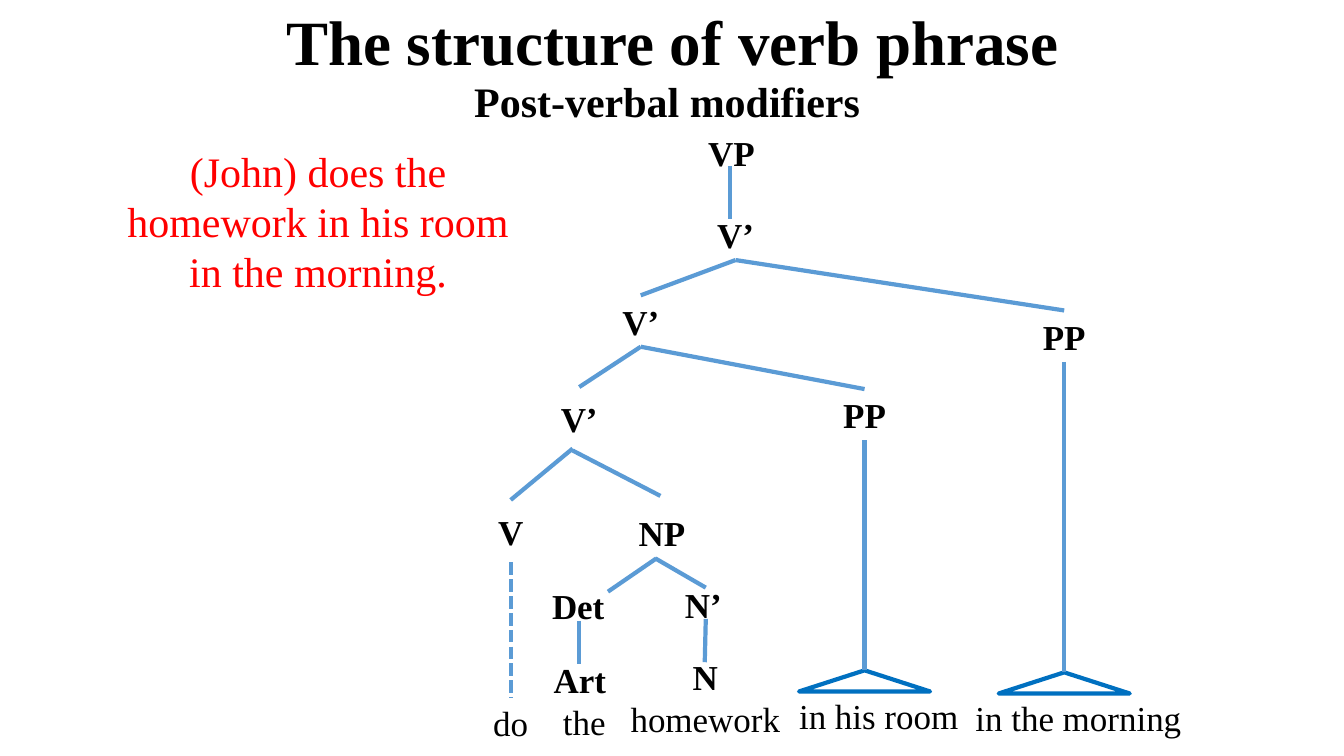
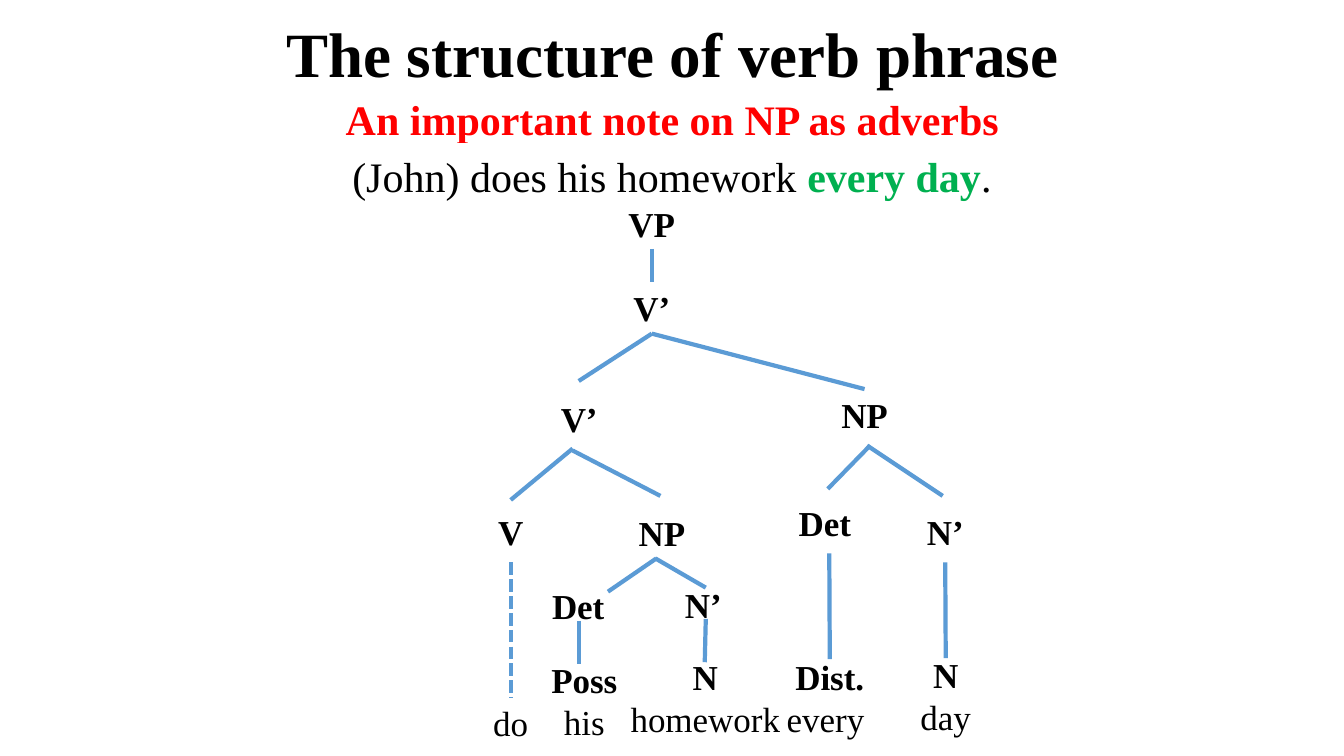
from dataclasses import dataclass
from typing import Any

from lxml.etree import SubElement
from pptx import Presentation
from pptx.dml.color import RGBColor
from pptx.enum.dml import MSO_LINE
from pptx.enum.shapes import MSO_CONNECTOR, MSO_SHAPE
from pptx.enum.text import MSO_ANCHOR, PP_ALIGN
from pptx.oxml.ns import qn
from pptx.util import Inches, Pt

SLIDE_WIDTH, SLIDE_HEIGHT = Inches(13.33), Inches(7.5)
CELL = SLIDE_HEIGHT / 75
FONT = "Times New Roman"
COLORS = {
    "text": "000000",
    "paper": "FFFFFF",
    "accent": "FF0000",
    "adverb": "00B050",
    "branch": "5B9BD5",
    "triangle": "0070C0",
}
TITLE_SIZE, SENTENCE_SIZE, NODE_SIZE = 45, 30, 25
HEADING_LEFT, HEADING_WIDTH, TITLE_HEIGHT, BODY_BOTTOM = 9.2, 115, 7, 73.8
TOP, BOTTOM = 0, 2


def cells(*values):
    return [round(value * CELL) for value in values]


def color(name):
    return RGBColor.from_string(COLORS[name])


@dataclass
class Region:
    shapes: Any
    left: float = 0
    top: float = 0

    def inner(self, left, top):
        return Region(self.shapes, self.left + left, self.top + top)

    def place(self, left, top, width, height):
        return cells(self.left + left, self.top + top, width, height)

    def point(self, column, row):
        return cells(self.left + column, self.top + row)


def style(font, size, tone="text", bold=False):
    font.name = FONT
    font.size = Pt(size)
    font.bold = bold
    font.color.rgb = color(tone)


def node(region, box, category="", word=""):
    label = region.shapes.add_textbox(*region.place(*box))
    frame = label.text_frame
    frame.word_wrap = True
    frame.vertical_anchor = MSO_ANCHOR.MIDDLE
    lines = [(text, text == category) for text in (category, word) if text]
    frame.text = "\n".join(text for text, _ in lines)
    for paragraph, (_, bold) in zip(frame.paragraphs, lines):
        paragraph.alignment = PP_ALIGN.CENTER
        style(paragraph.font, NODE_SIZE, bold=bold)
    return label


def branch(region, start, end, dashed=False):
    points = [region.point(*tip) if isinstance(tip, tuple) else (0, 0)
              for tip in (start, end)]
    link = region.shapes.add_connector(
        MSO_CONNECTOR.STRAIGHT, *points[0], *points[1])
    if not isinstance(start, tuple):
        link.begin_connect(start, BOTTOM)
    if not isinstance(end, tuple):
        link.end_connect(end, TOP)
    link.line.color.rgb = color("branch")
    link.line.width = Pt(3)
    if dashed:
        link.line.dash_style = MSO_LINE.SQUARE_DOT
    SubElement(link._element.spPr, qn("a:effectLst"))


def heading(slide, title_top, body_top, subtitle, tone):
    title, body = slide.placeholders
    title.left, title.top, title.width, title.height = cells(
        HEADING_LEFT, title_top, HEADING_WIDTH, TITLE_HEIGHT)
    body.left, body.top, body.width, body.height = cells(
        HEADING_LEFT, body_top, HEADING_WIDTH, BODY_BOTTOM - body_top)
    title.text_frame.vertical_anchor = MSO_ANCHOR.MIDDLE
    title.text_frame.text = "The structure of verb phrase"
    body.text_frame.text = subtitle
    for holder, size, text_tone in ((title, TITLE_SIZE, "text"),
                                    (body, SENTENCE_SIZE, tone)):
        paragraph = holder.text_frame.paragraphs[0]
        paragraph.alignment = PP_ALIGN.CENTER
        paragraph.line_spacing = 0.9
        style(paragraph.font, size, text_tone, bold=True)
    paragraph.space_before = Pt(10)
    properties = paragraph._p.get_or_add_pPr()
    properties.set("marL", "0")
    properties.set("indent", "0")
    bullet = SubElement(properties, qn("a:buNone"))
    properties.find(qn("a:defRPr")).addprevious(bullet)


def sentence(region, width, height, pieces):
    panel = region.shapes.add_shape(
        MSO_SHAPE.RECTANGLE, *region.place(0, 0, width, height))
    panel.shadow.inherit = False
    panel.fill.solid()
    panel.fill.fore_color.rgb = color("paper")
    panel.line.fill.background()
    panel.text_frame.word_wrap = True
    panel.text_frame.vertical_anchor = MSO_ANCHOR.MIDDLE
    paragraph = panel.text_frame.paragraphs[0]
    paragraph.alignment = PP_ALIGN.CENTER
    for text, tone, bold in pieces:
        run = paragraph.add_run()
        run.text = text
        style(run.font, SENTENCE_SIZE, tone, bold)


def object_phrase(region, determiner, word):
    node(region, (0, 0, 11.7, 6.2), "NP")
    node(region, (-6.8, 7.3, 8.7, 6.2), "Det")
    node(region, (5.6, 7.2, 8.7, 6.2), "N’")
    node(region, (-6.4, 16.8, 9.1, 5.9), determiner, word)
    node(region, (0.9, 16.2, 18.5, 6.6), "N", "homework")
    branch(region, (5.3, 5.7), (0.5, 9))
    branch(region, (5.2, 5.7), (10.2, 8.6))
    branch(region, (-2.4, 11.9), (-2.4, 16.2))
    branch(region, (10.2, 11.7), (10.1, 16))


def verb_core(region, determiner, word):
    core = node(region, (6.8, 0, 8.7, 6.2), "V’")
    verb = node(region, (0, 11.2, 8.7, 6.2), "V")
    do = node(region, (0, 30.8, 8.7, 4.9), word="do")
    branch(region, (10.5, 6.1), verb)
    branch(region, (10.5, 6.3), (19.2, 10.8))
    branch(region, verb, do, dashed=True)
    object_phrase(region.inner(13.5, 11.3), determiner, word)
    return core


def prepositional_phrase(region, depth, words, words_width):
    width, base = 15.7, 13
    phrase = node(region, (0, 0, width, 5.1), "PP")
    triangle = region.shapes.add_shape(
        MSO_SHAPE.ISOSCELES_TRIANGLE,
        *region.place((width - base) / 2, depth, base, 2.1))
    triangle.shadow.inherit = False
    triangle.fill.background()
    triangle.line.color.rgb = color("triangle")
    triangle.line.width = Pt(3)
    words_left = (width - words_width) / 2 + 1.4
    node(region, (words_left, depth + 1.6, words_width, 5.7), word=words)
    branch(region, phrase, triangle)
    return phrase


def adverb_phrase(region):
    phrase = node(region, (0, 0, 15.7, 5.1), "NP")
    determiner = node(region, (0, 10.1, 8.7, 6.2), "Det ")
    noun_bar = node(region, (11.5, 11, 8.7, 6.2), "N’")
    every = node(region, (-1, 26.8, 10.8, 7.5), "Dist.", "every ")
    day = node(region, (10.4, 26.7, 11, 7.4), "N", "day")
    branch(region, (8.1, 5.6), (15.6, 10.6))
    branch(region, (8.4, 5.6), (4.2, 9.9))
    branch(region, determiner, every)
    branch(region, noun_bar, day)
    return phrase


def modifier_tree(region):
    node(region, (21.9, 0, 8.7, 5.1), "VP")
    upper = node(region, (22.3, 8.1, 8.7, 5.1), "V’")
    middle = node(region, (13.8, 16.7, 6.9, 5.1), "V’")
    branch(region, (26.1, 3.9), (26.1, 9.1))
    core = verb_core(region.inner(0, 25.8), "Art ", "the")
    place = prepositional_phrase(
        region.inner(31.6, 26), 27.9, "in his room", 22.6)
    time = prepositional_phrase(
        region.inner(51.4, 18.2), 35.9, "in the morning", 25.5)
    for parent, child in ((upper, middle), (upper, time),
                          (middle, core), (middle, place)):
        branch(region, parent, child)


def adverb_tree(region):
    root = node(region, (14, 0, 8.7, 5.1), "VP")
    upper = node(region, (14, 8.4, 8.7, 5.1), "V’")
    verb_core(region.inner(0, 18.8), "Poss ", "his")
    adverb = adverb_phrase(region.inner(31.6, 19))
    for parent, child in ((root, upper), (upper, (11.1, 18.2)),
                          (upper, adverb)):
        branch(region, parent, child)


def modifiers_slide(slide):
    page = Region(slide.shapes)
    heading(slide, 1, 7.6, "Post-verbal modifiers ", "text")
    sentence(page.inner(11, 14.2), 41.1, 15.4, [
        ("(John) does the homework in his room in the morning.",
         "accent", False)])
    modifier_tree(page.inner(46.3, 12.6))


def adverbs_slide(slide):
    page = Region(slide.shapes)
    heading(slide, 2.2, 9.3, "An important note on NP as adverbs", "accent")
    sentence(page.inner(32, 14.2), 69.3, 6.5, [
        ("(John) does his homework ", "text", False),
        ("every day", "adverb", True),
        (".", "text", False)])
    adverb_tree(page.inner(46.3, 19.6))


def main():
    deck = Presentation()
    deck.slide_width, deck.slide_height = SLIDE_WIDTH, SLIDE_HEIGHT
    for build in (modifiers_slide, adverbs_slide):
        build(deck.slides.add_slide(deck.slide_layouts[1]))
    deck.save("out.pptx")


if __name__ == "__main__":
    main()
